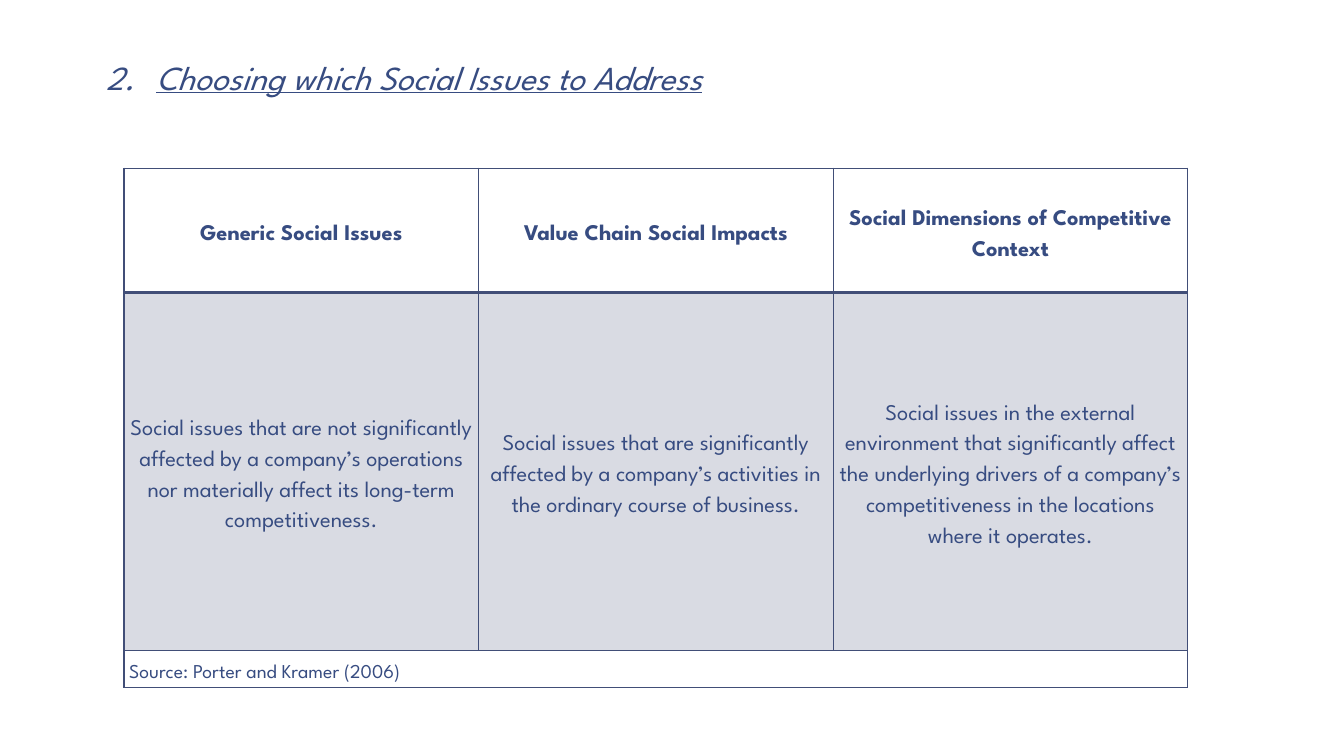
from lxml import etree
from pptx import Presentation
from pptx import util as u
from pptx.dml.color import RGBColor
from pptx.enum import text as t
from pptx.oxml import ns

INK = RGBColor(0x37, 0x4C, 0x81)
EDGE = RGBColor(0x41, 0x4E, 0x77)
FACE = "League Spartan"
HEADS = ["Generic Social Issues", "Value Chain Social Impacts",
         "Social Dimensions of Competitive Context"]
NOTES = [
    "Social issues that are not significantly affected by a company’s operations "
    "nor materially affect its long-term competitiveness.",
    "Social issues that are significantly affected by a company’s activities in "
    "the ordinary course of business.",
    "Social issues in the external environment that significantly affect the "
    "underlying drivers of a company’s competitiveness in the locations where it operates.",
]
SOURCE = "Source: Porter and Kramer (2006)"


def put(item, **form):
    for name, value in form.items():
        setattr(item, name, value)


def sub(node, tag, **attrs):
    return etree.SubElement(node, ns.qn(tag), attrs)


def style(para, size, **form):
    put(para.font, name=FACE, size=u.Pt(size), **form)
    para.font.color.rgb = INK


def add_head(slide):
    box = slide.placeholders[1]
    put(box, left=u.Inches(0.92), top=u.Inches(0.52),
        width=u.Inches(11.11), height=u.Inches(0.88))
    frame = box.text_frame
    put(frame, text="Choosing which Social Issues to Address",
        auto_size=t.MSO_AUTO_SIZE.NONE, vertical_anchor=t.MSO_ANCHOR.TOP,
        margin_left=u.Inches(0.13), margin_right=u.Inches(0.13),
        margin_top=u.Inches(0.07), margin_bottom=u.Inches(0.07))
    para = frame.paragraphs[0]
    put(para, line_spacing=0.95, space_before=u.Pt(0))
    props = para._p.get_or_add_pPr()
    props.set("marL", str(u.Inches(0.5)))
    props.set("indent", str(-u.Inches(0.5)))
    sub(props, "a:buFont", typeface=FACE)
    sub(props, "a:buAutoNum", type="arabicPeriod", startAt="2")
    style(para, 24, italic=True)
    put(para.runs[0].font, name=FACE, size=u.Pt(24), italic=True, underline=True)
    para.runs[0].font.color.rgb = INK


def add_edges(cell, low):
    props = cell._tc.get_or_add_tcPr()
    for side, width in (("L", 1), ("R", 1), ("T", 1), ("B", low)):
        line = sub(props, "a:ln" + side, w=str(u.Pt(width)))
        sub(sub(line, "a:solidFill"), "a:srgbClr", val=str(EDGE))


def add_tint(cell):
    cell.fill.solid()
    cell.fill.fore_color.rgb = EDGE
    tone = cell._tc.tcPr.find(".//" + ns.qn("a:solidFill") + "[last()]")
    tone = cell._tc.tcPr.find(ns.qn("a:solidFill"))
    sub(tone[0], "a:alpha", val="20000")


def fill_cell(cell, words, size=16, bold=False, tint=False, low=1,
              align=t.PP_ALIGN.CENTER):
    gap = u.Inches(0.05)
    put(cell, text=words, vertical_anchor=t.MSO_ANCHOR.MIDDLE, margin_left=gap,
        margin_right=gap, margin_top=gap, margin_bottom=gap)
    para = cell.text_frame.paragraphs[0]
    put(para, alignment=align, line_spacing=1.5)
    style(para, size, bold=bold)
    add_edges(cell, low)
    if tint:
        add_tint(cell)
    else:
        cell.fill.background()


def add_grid(slide):
    grid = slide.shapes.add_table(3, 3, u.Inches(1.23), u.Inches(1.67),
                                  u.Inches(10.55), u.Inches(5.08)).table
    put(grid, first_row=False, horz_banding=False)
    for row, high in zip(grid.rows, (1.23, 3.55, 0.3)):
        row.height = u.Inches(high)
    grid.cell(2, 0).merge(grid.cell(2, 2))
    for col, (head, note) in enumerate(zip(HEADS, NOTES)):
        fill_cell(grid.cell(0, col), head, bold=True, low=2)
        fill_cell(grid.cell(1, col), note, tint=True)
    for col, words in enumerate((SOURCE, "", "")):
        fill_cell(grid.cell(2, col), words, size=14, align=t.PP_ALIGN.LEFT)


def main():
    deck = Presentation()
    put(deck, slide_width=u.Inches(13.33), slide_height=u.Inches(7.5))
    slide = deck.slides.add_slide(deck.slide_layouts[1])
    title = slide.shapes.title.element
    title.getparent().remove(title)
    add_head(slide)
    add_grid(slide)
    deck.save("out.pptx")


if __name__ == "__main__":
    main()
